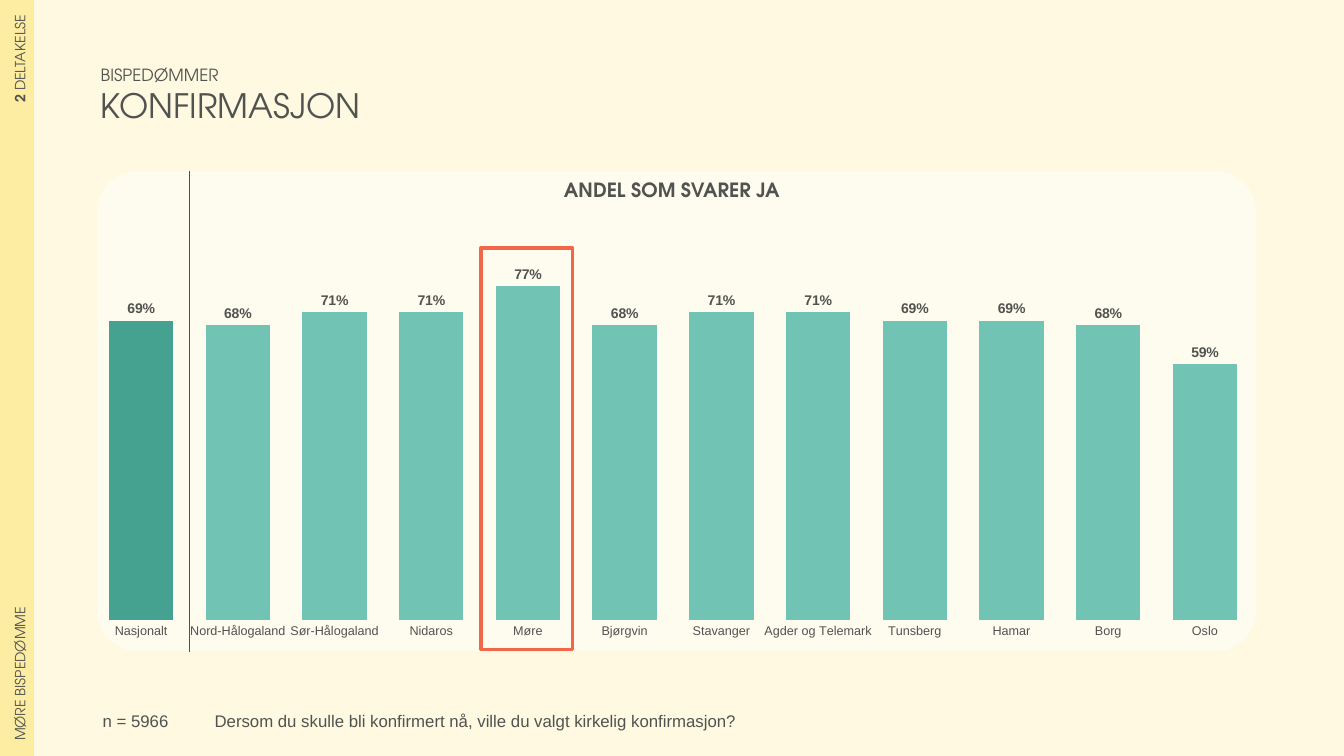
import pptx
import pptx.util
import pptx.chart.data
import pptx.dml.color
import pptx.enum.chart
import pptx.enum.shapes
import pptx.enum.text
import pptx.oxml
import pptx.oxml.ns

Inches = pptx.util.Inches
Pt = pptx.util.Pt
RGBColor = pptx.dml.color.RGBColor
Align = pptx.enum.text.PP_ALIGN
Anchor = pptx.enum.text.MSO_ANCHOR
Shape = pptx.enum.shapes.MSO_SHAPE

CREAM = RGBColor(0xFE, 0xF9, 0xE0)
YELLOW = RGBColor(0xFD, 0xED, 0xA2)
WHITE = RGBColor(0xFF, 0xFF, 0xFF)
GREY = RGBColor(0x51, 0x53, 0x50)
MINT = RGBColor(0x71, 0xC3, 0xB3)
TEAL = RGBColor(0x45, 0xA2, 0x90)
CORAL = RGBColor(0xF2, 0x66, 0x49)
HEAD, BODY = "TeX Gyre Adventor", "Arial"
PLAIN = "{2D5ABB26-0587-4C30-8999-92F81FD0307C}"

SHARES = {
    "Nasjonalt": 0.69, "Nord-Hålogaland": 0.68, "Sør-Hålogaland": 0.71,
    "Nidaros": 0.71, "Møre": 0.77, "Bjørgvin": 0.68, "Stavanger": 0.71,
    "Agder og Telemark": 0.71, "Tunsberg": 0.69, "Hamar": 0.69,
    "Borg": 0.68, "Oslo": 0.59,
}
SIDE = [
    ([("2", True), (" DELTAKELSE", False)], Align.RIGHT),
    ([("MØRE BISPEDØMME", False)], Align.LEFT),
]
TITLE = [("BISPEDØMMER", 12), ("KONFIRMASJON", 24)]
ASK = [("Dersom du skulle bli konfirmert nå, ville du valgt kirkelig konfirmasjon?", 12)]
COUNT = [("n = 5966", 12)]
LABEL = [("ANDEL SOM SVARER JA", 14)]
TEXTS = [
    (TITLE, (0.9, 0.59, 10.55, 0.71), HEAD, False, Align.LEFT, Anchor.MIDDLE),
    (ASK, (2.03, 7, 10.39, 0.27), BODY, False, Align.LEFT, Anchor.TOP),
    (COUNT, (0.92, 7, 1.43, 0.27), BODY, False, Align.LEFT, Anchor.TOP),
]
CAPTION = (LABEL, (3.33, 1.72, 6.67, 0.34), HEAD, True, Align.CENTER, Anchor.TOP)
PLOT = {"x": 0, "y": 0.032, "w": 0.994, "h": 0.903}
TOP, HIGH = 1.7, 4.76


def inch(*nums):
    return [Inches(n) for n in nums]


def style(font, size, face, bold=False):
    for key, val in {"size": Pt(size), "name": face, "bold": bold}.items():
        setattr(font, key, val)
    font.color.rgb = GREY


def write(slide, lines, box, face, bold, align, anchor):
    frame = slide.shapes.add_textbox(*inch(*box)).text_frame
    frame.word_wrap = True
    frame.vertical_anchor = anchor
    for i, (text, size) in enumerate(lines):
        para = frame.add_paragraph() if i else frame.paragraphs[0]
        para.alignment = align
        run = para.add_run()
        run.text = text
        style(run.font, size, face, bold)


def add_side(slide):
    table = slide.shapes.add_table(2, 1, *inch(0, 0, 0.34, 7.5)).table
    table.first_row = table.horz_banding = False
    table._tbl.tblPr.find(pptx.oxml.ns.qn("a:tableStyleId")).text = PLAIN
    for i, (runs, align) in enumerate(SIDE):
        cell = table.cell(i, 0)
        cell.fill.solid()
        cell.fill.fore_color.rgb = YELLOW
        cell.vertical_anchor = Anchor.MIDDLE
        for edge in ("left", "right", "top", "bottom"):
            setattr(cell, "margin_" + edge, Inches(0.15))
        cell._tc.get_or_add_tcPr().set("vert", "vert270")
        para = cell.text_frame.paragraphs[0]
        para.alignment = align
        for text, bold in runs:
            run = para.add_run()
            run.text = text
            style(run.font, 10, HEAD, bold)


def add_panel(slide):
    panel = slide.shapes.add_shape(Shape.ROUNDED_RECTANGLE, *inch(0.96, TOP, 11.5, HIGH))
    panel.adjustments[0] = 0.084
    panel.shadow.inherit = False
    panel.line.fill.background()
    panel.fill.solid()
    panel.fill.fore_color.rgb = WHITE
    tone = panel._element.spPr.find(".//" + pptx.oxml.ns.qn("a:srgbClr"))
    tone.append(pptx.oxml.parse_xml(
        f'<a:alpha {pptx.oxml.ns.nsdecls("a")} val="50000"/>'))


def add_bars(slide):
    enum = pptx.enum.chart
    data = pptx.chart.data.CategoryChartData(number_format="0%")
    data.categories = list(SHARES)
    data.add_series("Series 1", list(SHARES.values()))
    chart = slide.shapes.add_chart(
        enum.XL_CHART_TYPE.COLUMN_CLUSTERED, *inch(0.92, TOP, 11.58, HIGH), data).chart
    chart.has_title = chart.has_legend = False
    style(chart.font, 10, HEAD)

    axis = chart.category_axis
    axis.major_tick_mark = axis.minor_tick_mark = enum.XL_TICK_MARK.NONE
    axis.format.line.fill.background()
    style(axis.tick_labels.font, 9, BODY)
    scale = chart.value_axis
    for key, val in {"minimum_scale": 0, "maximum_scale": 1,
                     "has_major_gridlines": False, "visible": False}.items():
        setattr(scale, key, val)

    plot = chart.plots[0]
    plot.gap_width = 50
    plot.vary_by_categories = False
    bars = plot.series[0]
    for part, tone in ((bars, MINT), (bars.points[0], TEAL)):
        part.format.fill.solid()
        part.format.fill.fore_color.rgb = tone
    labels = bars.data_labels
    for key, val in {"show_value": True, "number_format": "0%",
                     "number_format_is_linked": False,
                     "position": enum.XL_LABEL_POSITION.OUTSIDE_END}.items():
        setattr(labels, key, val)
    style(labels.font, 10, BODY, True)

    modes = '<c:xMode val="edge"/><c:yMode val="edge"/>'
    sizes = "".join(f'<c:{key} val="{val}"/>' for key, val in PLOT.items())
    area = chart._chartSpace.chart.plotArea
    for old in area.findall(pptx.oxml.ns.qn("c:layout")):
        area.remove(old)
    area.insert(0, pptx.oxml.parse_xml(
        f'<c:layout {pptx.oxml.ns.nsdecls("c")}><c:manualLayout>'
        f'<c:layoutTarget val="inner"/>{modes}{sizes}</c:manualLayout></c:layout>'))


def add_rule(slide):
    rule = slide.shapes.add_connector(
        pptx.enum.shapes.MSO_CONNECTOR.STRAIGHT, *inch(1.88, TOP, 1.88, 6.47))
    rule.line.color.rgb = GREY
    rule.line.width = Pt(0.5)
    rule._element.spPr.append(pptx.oxml.parse_xml(
        f'<a:effectLst {pptx.oxml.ns.nsdecls("a")}/>'))


def add_mark(slide):
    mark = slide.shapes.add_shape(Shape.RECTANGLE, *inch(4.77, 2.46, 0.91, 3.98))
    mark.shadow.inherit = False
    mark.fill.background()
    mark.line.color.rgb = CORAL
    mark.line.width = Pt(2.25)


def main():
    deck = pptx.Presentation()
    deck.slide_width, deck.slide_height = inch(13.33, 7.5)
    slide = deck.slides.add_slide(deck.slide_layouts[6])
    slide.background.fill.solid()
    slide.background.fill.fore_color.rgb = CREAM
    add_side(slide)
    for item in TEXTS:
        write(slide, *item)
    add_panel(slide)
    add_bars(slide)
    add_rule(slide)
    write(slide, *CAPTION)
    add_mark(slide)
    deck.save("out.pptx")


if __name__ == "__main__":
    main()
